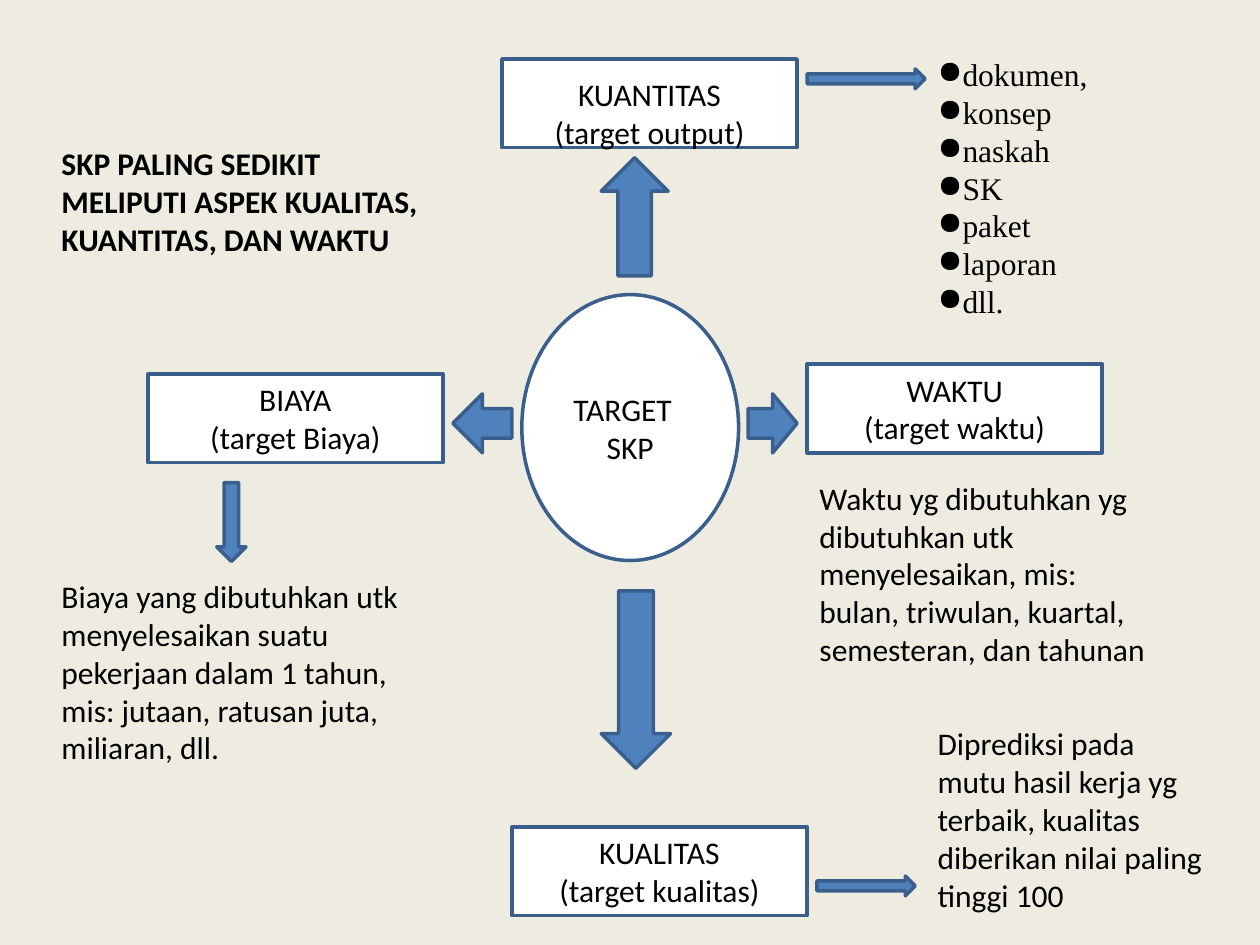
import pptx
import pptx.dml.color
import pptx.enum.shapes
import pptx.enum.text
import pptx.oxml.ns
import pptx.util
from dataclasses import dataclass
from lxml import etree

Cm = pptx.util.Cm
Pt = pptx.util.Pt
MSO = pptx.enum.shapes.MSO_SHAPE
ALIGN = pptx.enum.text.PP_ALIGN
ANCHOR = pptx.enum.text.MSO_ANCHOR


@dataclass(frozen=True)
class Theme:
    background: str = "EEECE1"
    panel: str = "FFFFFF"
    arrow: str = "4F81BD"
    outline: str = "3A5F8C"
    text: str = "000000"
    font: str = "Calibri"
    list_font: str = "Times New Roman"
    size: int = 18
    line: int = 2


THEME = Theme()
BOX_W, BOX_H = 5.95, 1.79


def rgb(value):
    return pptx.dml.color.RGBColor.from_string(value)


def write(tf, lines, font=THEME.font, bold=None, align=None):
    tf.word_wrap = True
    tf.text = "\n".join(lines)
    for p in tf.paragraphs:
        p.alignment = align
        for r in p.runs:
            r.font.name = font
            r.font.size = Pt(THEME.size)
            r.font.bold = bold
            r.font.color.rgb = rgb(THEME.text)


def add_shape(s, kind, x, y, w, h, fill):
    sp = s.shapes.add_shape(kind, Cm(x), Cm(y), Cm(w), Cm(h))
    sp.shadow.inherit = False
    sp.fill.solid()
    sp.fill.fore_color.rgb = rgb(fill)
    sp.line.color.rgb = rgb(THEME.outline)
    sp.line.width = Pt(THEME.line)
    return sp


def add_aspect(s, x, y, name, target, top=0.13):
    sp = add_shape(s, MSO.RECTANGLE, x, y, BOX_W, BOX_H, THEME.panel)
    tf = sp.text_frame
    tf.vertical_anchor = ANCHOR.TOP
    tf.margin_top, tf.margin_bottom = Cm(top), 0
    write(tf, [name, target], align=ALIGN.CENTER)


def add_center(s):
    sp = add_shape(s, MSO.OVAL, 10.52, 5.94, 4.37, 5.36, THEME.panel)
    tf = sp.text_frame
    tf.vertical_anchor = ANCHOR.MIDDLE
    tf.margin_left = tf.margin_right = Cm(0.4)
    write(tf, ["TARGET", "SKP"], align=ALIGN.CENTER)
    tf.paragraphs[0].alignment = ALIGN.LEFT


def add_note(s, x, y, w, h, lines, **style):
    tf = s.shapes.add_textbox(Cm(x), Cm(y), Cm(w), Cm(h)).text_frame
    write(tf, lines, **style)
    tf.auto_size = pptx.enum.text.MSO_AUTO_SIZE.SHAPE_TO_FIT_TEXT
    return tf


def add_bullets(tf, indent):
    for p in tf.paragraphs:
        props = p._p.get_or_add_pPr()
        props.set("marL", str(Cm(indent)))
        props.set("indent", str(-Cm(indent)))
        bullet = etree.SubElement(props, pptx.oxml.ns.qn("a:buChar"))
        bullet.set("char", "●")


def main():
    prs = pptx.Presentation()
    prs.slide_width, prs.slide_height = Cm(25.4), Cm(19.05)
    s = prs.slides.add_slide(prs.slide_layouts[6])
    s.background.fill.solid()
    s.background.fill.fore_color.rgb = rgb(THEME.background)

    # Centre and the four aspects around it
    add_center(s)
    add_aspect(s, 10.12, 1.19, "KUANTITAS", "(target output)", top=0.33)
    add_aspect(s, 10.32, 16.67, "KUALITAS", "(target kualitas)")
    add_aspect(s, 16.27, 7.34, "WAKTU", "(target waktu)")
    add_aspect(s, 2.98, 7.54, "BIAYA", "(target Biaya)")

    # Arrows: centre to aspects, then aspects to notes
    for kind, x, y, w, h in [
        (MSO.UP_ARROW, 12.12, 3.18, 1.35, 2.38),
        (MSO.DOWN_ARROW, 12.12, 11.91, 1.4, 3.58),
        (MSO.RIGHT_ARROW, 15.08, 7.94, 0.99, 1.19),
        (MSO.LEFT_ARROW, 9.13, 7.94, 1.19, 1.19),
        (MSO.DOWN_ARROW, 4.37, 9.73, 0.59, 1.59),
        (MSO.RIGHT_ARROW, 16.27, 1.39, 2.38, 0.4),
        (MSO.RIGHT_ARROW, 16.47, 17.66, 1.98, 0.4),
    ]:
        add_shape(s, kind, x, y, w, h, THEME.arrow)

    # Heading and notes
    add_note(s, 0.99, 2.78, 7.75, 2.56,
             ["SKP PALING SEDIKIT MELIPUTI ASPEK KUALITAS, KUANTITAS, DAN WAKTU"],
             bold=True)
    add_note(s, 0.99, 11.51, 7.75, 4.11,
             ["Biaya yang dibutuhkan utk menyelesaikan suatu pekerjaan dalam "
              "1 tahun, mis: jutaan, ratusan juta, miliaran, dll."])
    add_note(s, 16.27, 9.53, 8.33, 4.11,
             ["Waktu yg dibutuhkan yg dibutuhkan utk menyelesaikan, mis:",
              "bulan, triwulan, kuartal, semesteran, dan tahunan"])
    add_note(s, 18.65, 14.48, 5.95, 4.11,
             ["Diprediksi pada mutu hasil kerja yg terbaik, kualitas "
              "diberikan nilai paling tinggi 100"])
    outputs = add_note(s, 18.65, 0.99, 5.95, 5.64,
                       ["dokumen,", "konsep", "naskah", "SK", "paket",
                        "laporan", "dll."], font=THEME.list_font)
    add_bullets(outputs, 0.48)

    prs.save("out.pptx")


if __name__ == "__main__":
    main()
